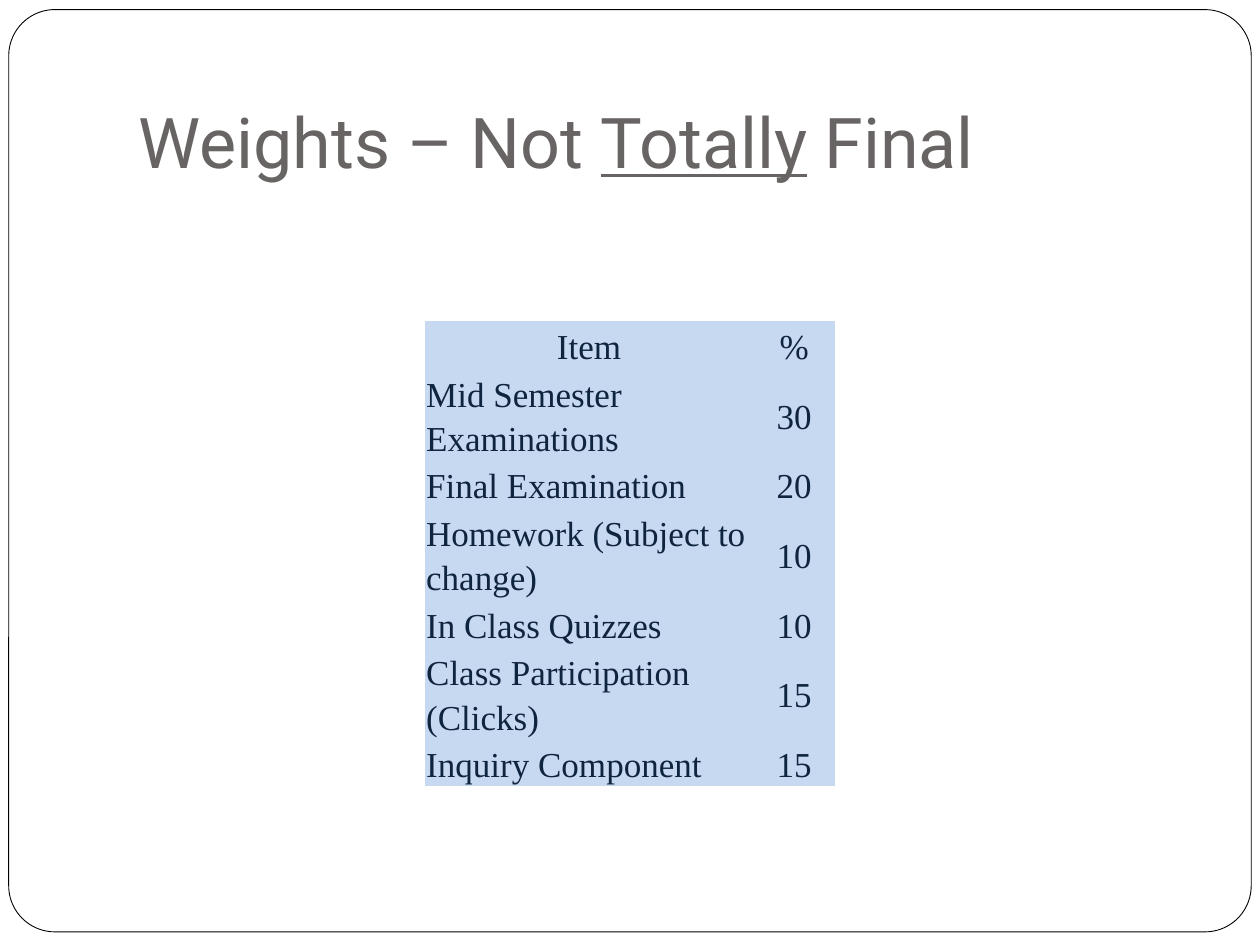
import pptx
import pptx.util
import pptx.dml.color
import pptx.enum.shapes
import pptx.enum.text

Pt = pptx.util.Pt
ALIGN = pptx.enum.text.PP_ALIGN
ANCHOR = pptx.enum.text.MSO_ANCHOR

NO_GRID_STYLE = "{2D5ABB26-0587-4C30-8999-92F81FD0307C}"
WEIGHTS = [
    ("Item", "%"),
    ("Mid Semester Examinations", "30"),
    ("Final Examination", "20"),
    ("Homework (Subject to change)", "10"),
    ("In Class Quizzes", "10"),
    ("Class Participation (Clicks)", "15"),
    ("Inquiry Component", "15"),
]
TITLE_FONT = {"name": "Roboto", "size": Pt(40)}
CELL_FONT = {"name": "Times New Roman", "size": Pt(20), "bold": False}
CELL_SPACING = {"line_spacing": 1.15, "space_after": Pt(10)}


def apply(obj, values):
    for name, value in values.items():
        setattr(obj, name, value)


def paint(fmt, color):
    """Give a fill or font its colour."""
    target = fmt.color if hasattr(fmt, "color") else fmt.fore_color
    target.rgb = pptx.dml.color.RGBColor.from_string(color)


def margins(left, top, right, bottom):
    return {"margin_left": Pt(left), "margin_top": Pt(top),
            "margin_right": Pt(right), "margin_bottom": Pt(bottom)}


def add_frame(s):
    sp = s.shapes.add_shape(pptx.enum.shapes.MSO_SHAPE.ROUNDED_RECTANGLE,
                            Pt(5), Pt(5.5), Pt(710), Pt(527))
    sp.adjustments[0] = 0.05
    sp.shadow.inherit = False
    sp.fill.solid()
    paint(sp.fill, "FFFFFF")
    paint(sp.line, "000000")
    sp.line.width = Pt(0.5)
    # Send behind the title
    s.shapes._spTree.insert(2, sp._element)


def set_title(s, runs):
    sp = s.shapes.title
    apply(sp, {"left": Pt(72), "top": Pt(21.6),
               "width": Pt(612), "height": Pt(90)})
    tf = sp.text_frame
    apply(tf, {"vertical_anchor": ANCHOR.BOTTOM, "word_wrap": True,
               "auto_size": pptx.enum.text.MSO_AUTO_SIZE.NONE,
               **margins(7.2, 3.6, 7.2, 7.2)})
    p = tf.paragraphs[0]
    p.alignment = ALIGN.LEFT
    for text, underline in runs:
        r = p.add_run()
        r.text = text
        apply(r.font, {**TITLE_FONT, "underline": underline})
        paint(r.font, "696464")


def fill_cell(cell, text, align):
    cell.fill.solid()
    paint(cell.fill, "C6D9F1")
    apply(cell, {"vertical_anchor": ANCHOR.MIDDLE, **margins(0.75, 0.75, 0.75, 0.75)})
    p = cell.text_frame.paragraphs[0]
    apply(p, {"alignment": align, **CELL_SPACING})
    r = p.add_run()
    r.text = text
    apply(r.font, CELL_FONT)
    paint(r.font, "0F243E")


def add_weights_table(s, rows):
    gf = s.shapes.add_table(len(rows), 2, Pt(242.8), Pt(183.6), Pt(234.5), Pt(175))
    table = gf.table
    apply(table, {"first_row": False, "horz_banding": False})
    table._tbl.tblPr.find(pptx.oxml.ns.qn("a:tableStyleId")).text = NO_GRID_STYLE
    for column, width in zip(table.columns, (187.7, 46.8)):
        column.width = Pt(width)
    for i, row in enumerate(rows):
        table.rows[i].height = Pt(25)
        for j, text in enumerate(row):
            label = i > 0 and j == 0
            fill_cell(table.cell(i, j), text, ALIGN.LEFT if label else ALIGN.CENTER)


def main():
    prs = pptx.Presentation()
    apply(prs, {"slide_width": Pt(720), "slide_height": Pt(540)})
    s = prs.slides.add_slide(prs.slide_layouts[5])
    add_frame(s)
    set_title(s, [("Weights – Not ", False), ("Totally", True), (" Final", False)])
    add_weights_table(s, WEIGHTS)
    prs.save("out.pptx")


if __name__ == "__main__":
    main()
